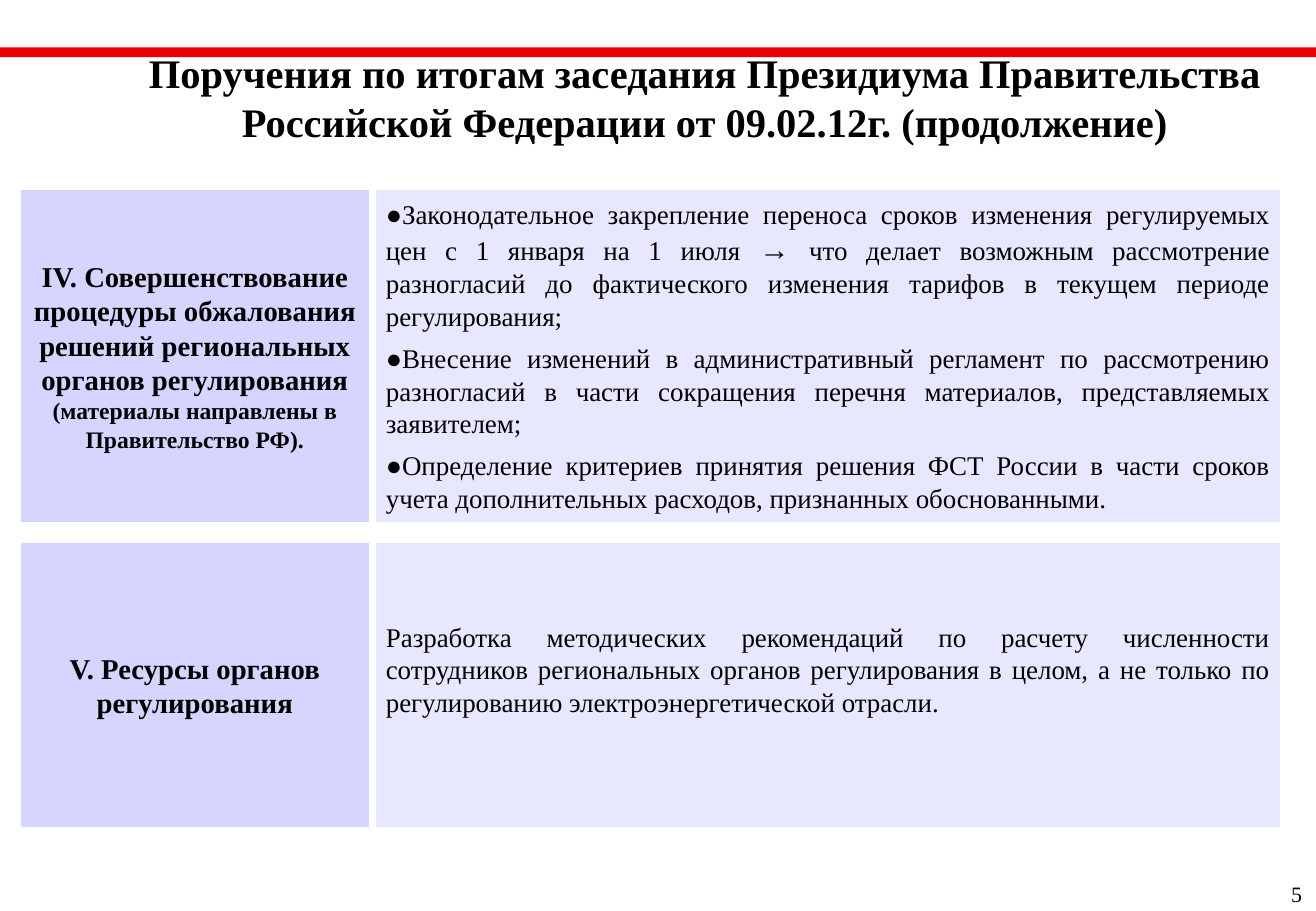
from pptx import Presentation
from pptx.dml.color import RGBColor
from pptx.enum.shapes import MSO_SHAPE
from pptx.enum.text import MSO_ANCHOR, PP_ALIGN
from pptx.util import Pt

PX = 9144  # 100 px to the inch
FONT = "Times New Roman"
BLACK = RGBColor(0x00, 0x00, 0x00)
WHITE = RGBColor(0xFF, 0xFF, 0xFF)
RED = RGBColor(0xEB, 0x00, 0x00)
LILAC = RGBColor(0xD5, 0xD5, 0xFF)
PALE_LILAC = RGBColor(0xE7, 0xE7, 0xFF)

WIDTH, HEIGHT = 1084, 750
ROW_LEFT, ROW_WIDTH = 16, 1040
TOPIC_WIDTH, GAP = 289, 3

TITLE = ("Поручения по итогам заседания Президиума Правительства "
         "Российской Федерации от 09.02.12г. (продолжение)")

# Paragraphs are lists of runs: (text, size, bold)
BULLET = ("●", 16, True)
APPEALS_TOPIC = [[
    ("IV. Совершенствование процедуры обжалования решений региональных "
     "органов регулирования ", 17, True),
    ("(материалы направлены в Правительство РФ).", 14, True),
]]
APPEALS = [
    [("●Законодательное закрепление переноса сроков изменения регулируемых "
      "цен с 1 января на 1 июля ", 16, False),
     ("→ ", 18, True),
     ("что делает возможным рассмотрение разногласий до фактического "
      "изменения тарифов в текущем периоде регулирования;", 16, False)],
    [BULLET,
     ("Внесение изменений в административный регламент по рассмотрению "
      "разногласий в части сокращения перечня материалов, представляемых "
      "заявителем;", 16, False)],
    [BULLET,
     ("Определение критериев принятия решения ФСТ России в части сроков "
      "учета дополнительных расходов, признанных обоснованными.", 16, False)],
]
RESOURCES_TOPIC = [[("V. Ресурсы органов регулирования", 17, True)]]
RESOURCES = [[
    ("Разработка методических рекомендаций по расчету численности "
     "сотрудников региональных органов регулирования в целом, а не только по "
     "регулированию электроэнергетической отрасли.", 16, False),
]]


def px(*lengths):
    return [n * PX for n in lengths]


def write(tf, paragraphs, align, wrap=True, bottom=5):
    tf.word_wrap = wrap
    tf.vertical_anchor = MSO_ANCHOR.MIDDLE
    tf.margin_left, tf.margin_top, tf.margin_right, tf.margin_bottom = px(10, 5, 10, bottom)
    for i, runs in enumerate(paragraphs):
        p = tf.add_paragraph() if i else tf.paragraphs[0]
        p.alignment = align
        if i:
            p.space_before = Pt(6)
        for text, size, bold in runs:
            r = p.add_run()
            r.text = text
            r.font.name = FONT
            r.font.size = Pt(size)
            r.font.bold = bold
            r.font.color.rgb = BLACK


def add_rect(slide, box, fill, outlined=True):
    sp = slide.shapes.add_shape(MSO_SHAPE.RECTANGLE, *px(*box))
    sp.shadow.inherit = False
    sp.fill.solid()
    sp.fill.fore_color.rgb = fill
    if outlined:
        sp.line.color.rgb = WHITE
        sp.line.width = Pt(2)
    else:
        sp.line.fill.background()
    return sp


def add_text(slide, box, text, size, bold=False, wrap=True):
    tb = slide.shapes.add_textbox(*px(*box))
    write(tb.text_frame, [[(text, size, bold)]], PP_ALIGN.CENTER, wrap)


def add_row(slide, box, topic, tasks, bottom=5):
    """Topic cell on the left, its tasks on the right."""
    left, top, width, height = box
    offset = TOPIC_WIDTH + GAP
    sp = add_rect(slide, (left, top, TOPIC_WIDTH, height), LILAC)
    write(sp.text_frame, topic, PP_ALIGN.CENTER)
    sp = add_rect(slide, (left + offset, top, width - offset, height), PALE_LILAC)
    write(sp.text_frame, tasks, PP_ALIGN.JUSTIFY, bottom=bottom)


def main():
    prs = Presentation()
    prs.slide_width, prs.slide_height = px(WIDTH, HEIGHT)
    slide = prs.slides.add_slide(prs.slide_layouts[6])
    add_rect(slide, (0, 39, WIDTH, 8), RED, outlined=False)
    add_row(slide, (ROW_LEFT, 155, ROW_WIDTH, 276), APPEALS_TOPIC, APPEALS)
    add_row(slide, (ROW_LEFT, 446, ROW_WIDTH, 236), RESOURCES_TOPIC, RESOURCES, bottom=31)
    add_text(slide, (1053, 720, 30, 32), "5", 13, wrap=False)
    add_text(slide, (77, 36, 1007, 87), TITLE, 24, bold=True)
    prs.save("out.pptx")


if __name__ == "__main__":
    main()
